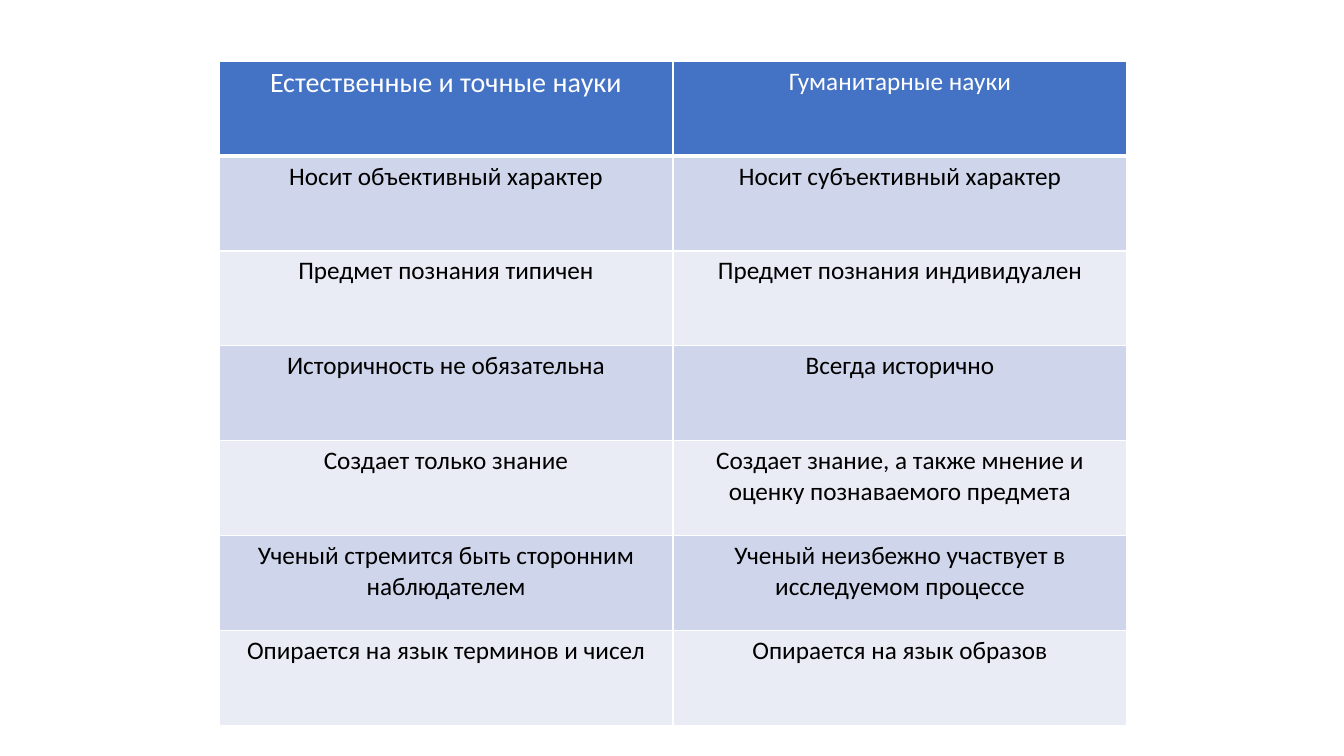
from dataclasses import dataclass

from lxml.etree import SubElement
from pptx import Presentation
from pptx.dml.color import RGBColor
from pptx.enum.text import PP_ALIGN
from pptx.oxml.ns import qn
from pptx.table import _Cell
from pptx.util import Emu, Pt


@dataclass(frozen=True)
class Theme:
    font: str = "Calibri"
    header_fill: str = "4472C4"
    band_fills: tuple[str, str] = ("CFD5EA", "E9EBF5")
    header_text: str = "FFFFFF"
    body_text: str = "000000"
    border: str = "FFFFFF"
    large_size: int = 20
    text_size: int = 18
    border_width: int = 1
    header_rule_width: int = 3


@dataclass(frozen=True)
class Comparison:
    sciences: str
    humanities: str


THEME = Theme()
EMU_PER_INCH = 914400
PX_PER_INCH = 100.8
SLIDE_WIDTH, SLIDE_HEIGHT = 1344, 756
TABLE_LEFT, TABLE_TOP = 219, 61
COLUMN_WIDTH, ROW_HEIGHT = 454, 95

COMPARISONS = (
    Comparison("Естественные и точные науки", "Гуманитарные науки"),
    Comparison("Носит объективный характер", "Носит субъективный характер"),
    Comparison("Предмет познания типичен", "Предмет познания индивидуален"),
    Comparison("Историчность не обязательна", "Всегда исторично"),
    Comparison("Создает только знание", "Создает знание, а также мнение и оценку познаваемого предмета"),
    Comparison("Ученый стремится быть сторонним наблюдателем", "Ученый неизбежно участвует в исследуемом процессе"),
    Comparison("Опирается на язык терминов и чисел", "Опирается на язык образов"),
)


def px(length: int) -> Emu:
    return Emu(round(length * EMU_PER_INCH / PX_PER_INCH))


def set_borders(cell: _Cell, top_width: int, bottom_width: int) -> None:
    properties = cell._tc.get_or_add_tcPr()
    widths = {
        "a:lnL": THEME.border_width,
        "a:lnR": THEME.border_width,
        "a:lnT": top_width,
        "a:lnB": bottom_width,
    }
    for tag, width in widths.items():
        line = SubElement(properties, qn(tag), w=str(Pt(width)))
        fill = SubElement(line, qn("a:solidFill"))
        SubElement(fill, qn("a:srgbClr"), val=THEME.border)


def format_cell(cell: _Cell, text: str, fill: str, color: str, size: int) -> None:
    cell.text = text
    cell.fill.solid()
    cell.fill.fore_color.rgb = RGBColor.from_string(fill)
    paragraph = cell.text_frame.paragraphs[0]
    paragraph.alignment = PP_ALIGN.CENTER
    paragraph.font.name = THEME.font
    paragraph.font.size = Pt(size)
    paragraph.font.bold = False
    paragraph.font.color.rgb = RGBColor.from_string(color)


def main() -> None:
    presentation = Presentation()
    presentation.slide_width = px(SLIDE_WIDTH)
    presentation.slide_height = px(SLIDE_HEIGHT)
    slide = presentation.slides.add_slide(presentation.slide_layouts[6])
    table = slide.shapes.add_table(
        len(COMPARISONS), 2, px(TABLE_LEFT), px(TABLE_TOP),
        px(2 * COLUMN_WIDTH), px(len(COMPARISONS) * ROW_HEIGHT),
    ).table
    for column in table.columns:
        column.width = px(COLUMN_WIDTH)

    for row_index, comparison in enumerate(COMPARISONS):
        table.rows[row_index].height = px(ROW_HEIGHT)
        is_header = row_index == 0
        fill = THEME.header_fill if is_header else THEME.band_fills[(row_index - 1) % 2]
        color = THEME.header_text if is_header else THEME.body_text
        top_width = THEME.header_rule_width if row_index == 1 else THEME.border_width
        bottom_width = THEME.header_rule_width if is_header else THEME.border_width
        for column_index, text in enumerate((comparison.sciences, comparison.humanities)):
            cell = table.cell(row_index, column_index)
            size = THEME.large_size if is_header and column_index == 0 else THEME.text_size
            set_borders(cell, top_width, bottom_width)
            format_cell(cell, text, fill, color, size)

    presentation.save("out.pptx")


if __name__ == "__main__":
    main()
